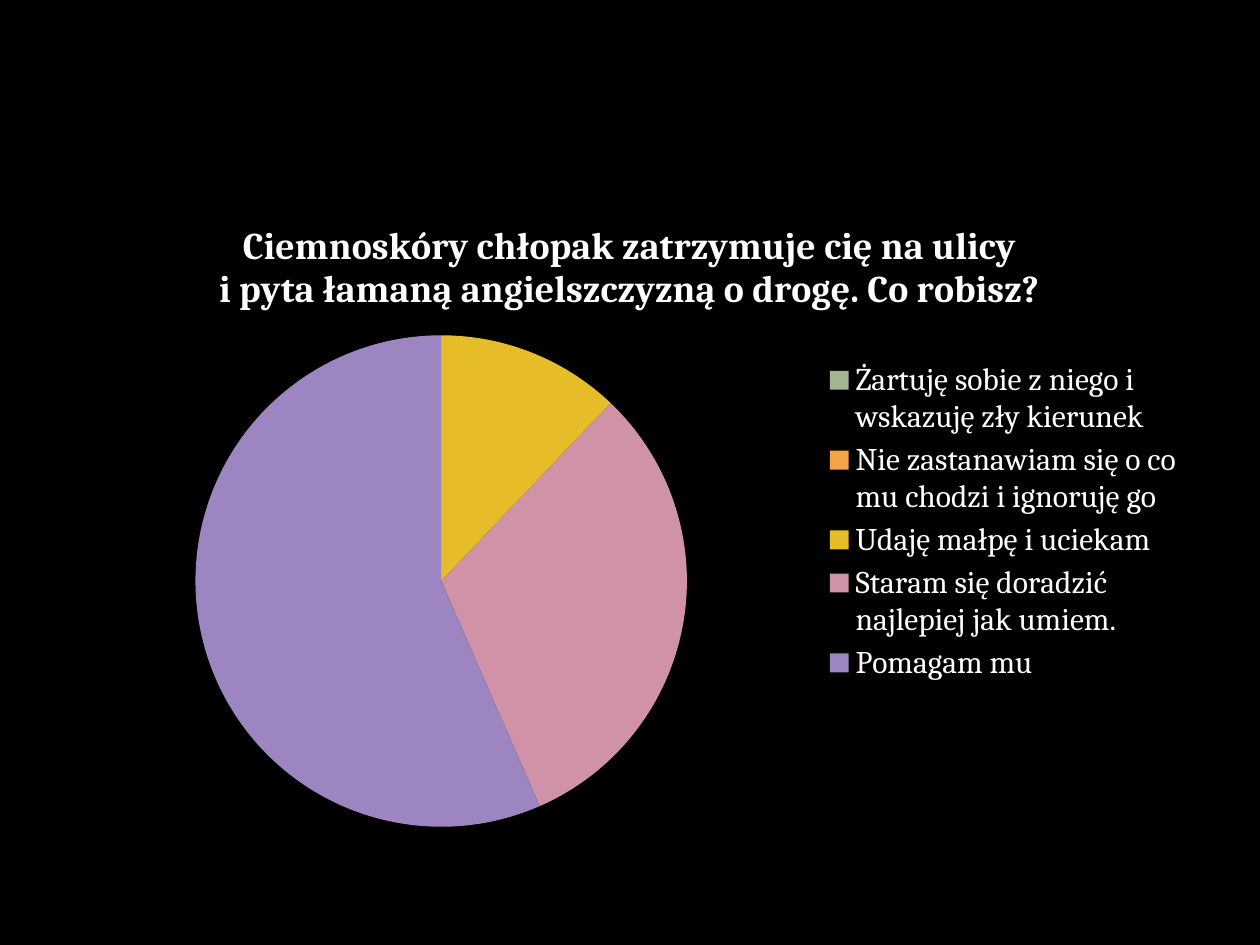
from typing import NamedTuple

from pptx import Presentation
from pptx.chart.data import CategoryChartData
from pptx.dml.color import RGBColor
from pptx.enum.chart import XL_CHART_TYPE, XL_LEGEND_POSITION
from pptx.util import Inches, Pt

PIE = XL_CHART_TYPE.PIE
RIGHT = XL_LEGEND_POSITION.RIGHT
BLANK_LAYOUT = 6
FONT = "Cambria"
WHITE = "FFFFFF"
BLACK = "000000"
QUESTION = (
    "Ciemnoskóry chłopak zatrzymuje cię na ulicy",
    "i pyta łamaną angielszczyzną o drogę. Co robisz?",
)


class Answer(NamedTuple):
    label: str
    percent: int
    color: str


ANSWERS = (
    Answer("Żartuję sobie z niego i wskazuję zły kierunek", 0, "A5B592"),
    Answer("Nie zastanawiam się o co mu chodzi i ignoruję go", 0, "F3A447"),
    Answer("Udaję małpę i uciekam", 12, "E7BC29"),
    Answer("Staram się doradzić najlepiej jak umiem.", 31, "D092A7"),
    Answer("Pomagam mu", 56, "9C85C0"),
)


def fill_solid(fill, color: str) -> None:
    fill.solid()
    fill.fore_color.rgb = RGBColor.from_string(color)


def format_font(font, size: float, bold: bool = False) -> None:
    font.name = FONT
    font.size = Pt(size)
    font.bold = bold
    font.color.rgb = RGBColor.from_string(WHITE)


def add_answer_pie(slide, left: int, top: int, width: int, height: int):
    data = CategoryChartData()
    data.categories = [answer.label for answer in ANSWERS]
    data.add_series("Series 1", [answer.percent for answer in ANSWERS])
    chart = slide.shapes.add_chart(PIE, left, top, width, height, data).chart
    format_font(chart.font, 18)

    plot = chart.plots[0]
    plot.vary_by_categories = True
    for index, answer in enumerate(ANSWERS):
        fill_solid(plot.series[0].points[index].format.fill, answer.color)

    chart.has_legend = True
    chart.legend.position = RIGHT
    chart.legend.include_in_layout = False
    return chart


def add_question(chart) -> None:
    chart.has_title = True
    chart.chart_title.include_in_layout = False
    frame = chart.chart_title.text_frame
    frame.text = "\n".join(QUESTION)
    for para in frame.paragraphs:
        for span in para.runs:
            format_font(span.font, 21.6, bold=True)


def main() -> None:
    deck = Presentation()
    deck.slide_width, deck.slide_height = Inches(10), Inches(7.5)
    slide = deck.slides.add_slide(deck.slide_layouts[BLANK_LAYOUT])
    fill_solid(slide.background.fill, BLACK)
    chart = add_answer_pie(slide, Inches(0.5), Inches(1.58), Inches(9), Inches(5.12))
    add_question(chart)
    deck.save("out.pptx")


if __name__ == "__main__":
    main()
